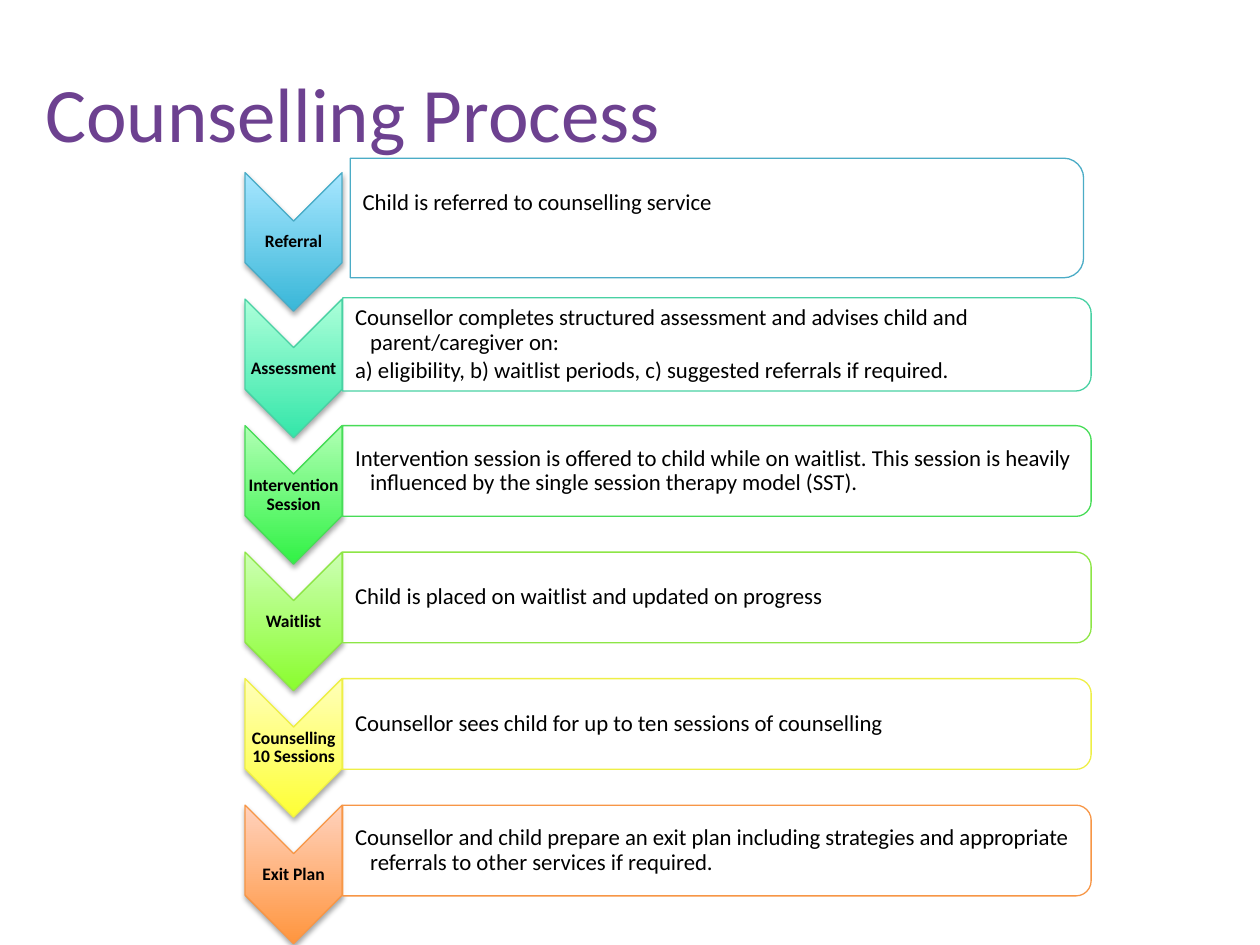
"""Build the counselling process slide: six chevron steps with descriptions."""
from dataclasses import dataclass

from lxml.etree import SubElement
from pptx import Presentation
from pptx.dml.color import RGBColor
from pptx.enum.shapes import MSO_SHAPE
from pptx.enum.text import MSO_ANCHOR, PP_ALIGN
from pptx.oxml.ns import qn
from pptx.util import Inches, Pt


@dataclass(frozen=True)
class Theme:
    font: str = "Calibri"
    title_color: str = "6D4190"
    text_color: str = "000000"
    panel_color: str = "FFFFFF"
    title_size: int = 44
    label_size: int = 10
    body_size: int = 13
    line_width: float = 0.75


@dataclass(frozen=True)
class Step:
    label: str
    lines: tuple
    dark: str
    light: str
    outline: str
    panel_width: float = 5.94
    panel_height: float = 0.72
    bottom_inset: float = 0.01


THEME = Theme()
FIRST_ROW, LAST_ROW = 1.92, 6.94
CHEVRON_COLUMN, PANEL_COLUMN = 2.33, 5.69
CHEVRON_LENGTH, CHEVRON_WIDTH = 1.1, 0.77
PANEL_LIFT = 0.19

STEPS = (
    Step("Referral", ("Child is referred to counselling service",),
         "39B7D8", "A7E6FF", "4BACC6", 5.82, 0.95, 0.24),
    Step("Assessment",
         ("Counsellor completes structured assessment and advises child and parent/caregiver on:",
          "a) eligibility, b) waitlist periods, c) suggested referrals if required."),
         "34E6A9", "ACFFD9", "49D1A3", panel_height=0.74),
    Step("Intervention Session",
         ("Intervention session is offered to child while on waitlist. This session is heavily "
          "influenced by the single session therapy model (SST).",),
         "31F245", "B0FFB4", "47DC57"),
    Step("Waitlist", ("Child is placed on waitlist and updated on progress",),
         "8AFD2E", "CCFFB4", "8DE646"),
    Step("Counselling 10 Sessions",
         ("Counsellor sees child for up to ten sessions of counselling",),
         "FEFF35", "FFFFB9", "EEEF46"),
    Step("Exit Plan",
         ("Counsellor and child prepare an exit plan including strategies and appropriate "
          "referrals to other services if required.",),
         "FF953E", "FFD2BD", "F79646"),
)


def color(value):
    """Turn a hex string into a colour."""
    return RGBColor.from_string(value)


def add_text(shapes, box, lines, size, ink, insets, anchor=MSO_ANCHOR.MIDDLE, bold=False):
    """Add a wrapped text box and return its paragraphs."""
    frame = shapes.add_textbox(*map(Inches, box)).text_frame
    frame.word_wrap = True
    frame.vertical_anchor = anchor
    (frame.margin_left, frame.margin_top,
     frame.margin_right, frame.margin_bottom) = map(Inches, insets)
    frame.text = "\n".join(lines)
    for paragraph in frame.paragraphs:
        font = paragraph.font
        font.name, font.size, font.bold = THEME.font, Pt(size), bold
        font.color.rgb = color(ink)
    return frame.paragraphs


def add_turned_shape(shapes, kind, center, size, outline):
    """Add a preset shape turned a quarter clockwise about its centre."""
    (x, y), (width, height) = center, size
    shape = shapes.add_shape(kind, *map(Inches, (x - width / 2, y - height / 2, width, height)))
    shape.rotation = 90
    shape.shadow.inherit = False
    shape.line.color.rgb = color(outline)
    shape.line.width = Pt(THEME.line_width)
    return shape


def add_drop_shadow(shape):
    """Give a shape a soft shadow straight below it."""
    effects = shape._element.spPr.find(qn("a:effectLst"))
    shadow = SubElement(effects, qn("a:outerShdw"), blurRad=str(Pt(3.1)), dist=str(Pt(1.8)),
                        dir="5400000", rotWithShape="0")
    shade = SubElement(shadow, qn("a:srgbClr"), val="000000")
    SubElement(shade, qn("a:alpha"), val="35000")


def add_chevron(shapes, step, row):
    """Add the gradient chevron and its label."""
    chevron = add_turned_shape(shapes, MSO_SHAPE.CHEVRON, (CHEVRON_COLUMN, row),
                               (CHEVRON_LENGTH, CHEVRON_WIDTH), step.outline)
    chevron.fill.gradient()
    chevron.fill.gradient_angle = 90
    for stop, value, position in zip(chevron.fill.gradient_stops, (step.dark, step.light), (0, 1)):
        stop.color.rgb = color(value)
        stop.position = position
    chevron._element.spPr.find(qn("a:gradFill")).set("rotWithShape", "0")
    add_drop_shadow(chevron)
    box = (CHEVRON_COLUMN - CHEVRON_WIDTH / 2, row - 0.165, CHEVRON_WIDTH, 0.33)
    for paragraph in add_text(shapes, box, [step.label], THEME.label_size, THEME.text_color,
                              [0.01] * 4, bold=True):
        paragraph.alignment = PP_ALIGN.CENTER
        paragraph.line_spacing = 0.9


def add_panel(shapes, step, row):
    """Add the rounded panel and its description."""
    middle = row - PANEL_LIFT
    panel = add_turned_shape(shapes, MSO_SHAPE.ROUND_2_SAME_RECTANGLE, (PANEL_COLUMN, middle),
                             (step.panel_height, step.panel_width), step.outline)
    panel.fill.solid()
    panel.fill.fore_color.rgb = color(THEME.panel_color)
    paint = panel._element.spPr.find(qn("a:solidFill"))[0]
    SubElement(paint, qn("a:alpha"), val="90000")
    height = step.panel_height * 0.9
    box = (PANEL_COLUMN - step.panel_width / 2, middle - height / 2,
           step.panel_width - 0.04, height)
    for paragraph in add_text(shapes, box, step.lines, THEME.body_size, THEME.text_color,
                              (0.1, 0.01, 0.01, step.bottom_inset)):
        paragraph.level = 1
        paragraph.line_spacing = 0.9
        paragraph.space_after = Pt(2)
        properties = paragraph._p.get_or_add_pPr()
        properties.set("marL", str(Inches(0.12)))
        properties.set("indent", str(Inches(-0.12)))


def main():
    """Build and save the slide."""
    presentation = Presentation()
    presentation.slide_width, presentation.slide_height = Inches(10), Inches(7.5)
    slide = presentation.slides.add_slide(presentation.slide_layouts[6])
    add_text(slide.shapes, (0.26, 0.47, 9, 1.01), ["Counselling Process"], THEME.title_size,
             THEME.title_color, (0.1, 0.05, 0.1, 0.05), MSO_ANCHOR.TOP)
    process = slide.shapes.add_group_shape().shapes
    pitch = (LAST_ROW - FIRST_ROW) / (len(STEPS) - 1)
    for index, step in enumerate(STEPS):
        row = FIRST_ROW + index * pitch
        add_chevron(process, step, row)
        add_panel(process, step, row)
    presentation.save("out.pptx")


if __name__ == "__main__":
    main()
